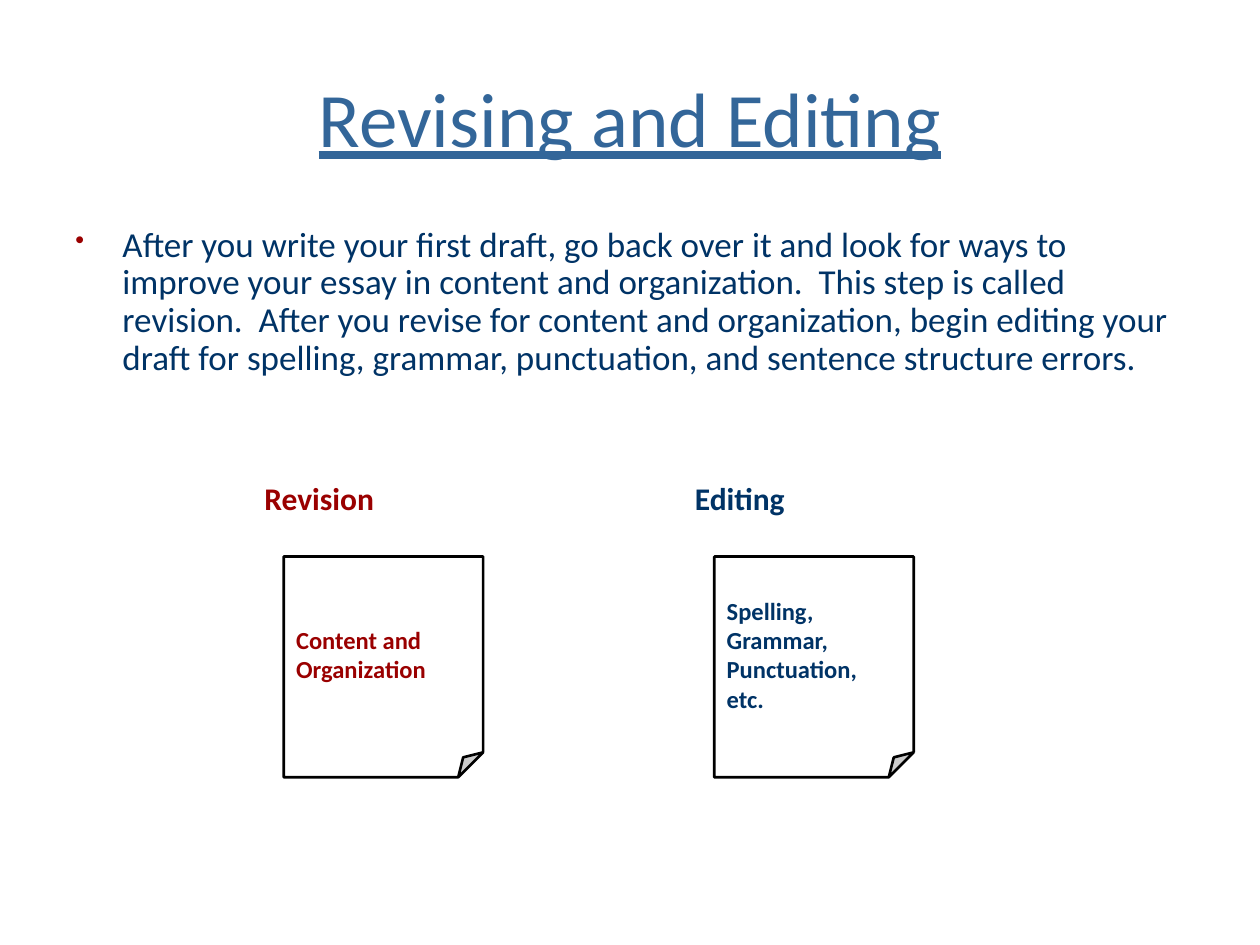
from dataclasses import dataclass

from lxml import etree
from pptx import Presentation
from pptx.dml.color import RGBColor
from pptx.enum.shapes import MSO_SHAPE
from pptx.enum.text import MSO_ANCHOR, PP_ALIGN
from pptx.oxml.ns import qn
from pptx.util import Cm, Pt

FOLDED_CORNER = MSO_SHAPE.FOLDED_CORNER
TOP, MIDDLE = MSO_ANCHOR.TOP, MSO_ANCHOR.MIDDLE
LEFT, CENTER = PP_ALIGN.LEFT, PP_ALIGN.CENTER


@dataclass(frozen=True)
class Theme:
    font: str = "Calibri"
    title_color: str = "336699"
    navy: str = "003366"
    red: str = "9A0000"
    paper: str = "FFFFFF"
    outline: str = "000000"
    title_size: int = 44
    body_size: int = 20
    label_size: int = 18
    note_size: int = 14


@dataclass(frozen=True)
class Stage:
    label: str
    lines: tuple[str, ...]
    color: str


THEME = Theme()
STAGES = (
    Stage("Revision", ("Content and", "Organization"), THEME.red),
    Stage("Editing", ("Spelling,", "Grammar,", "Punctuation,", "etc."), THEME.navy),
)
BODY = (
    "After you write your first draft, go back over it and look for ways to "
    "improve your essay in content and organization.  This step is called revision.  "
    "After you revise for content and organization, begin editing your draft for "
    "spelling, grammar, punctuation, and sentence structure errors."
)
FIRST_STAGE_LEFT, STAGE_STEP = 5.08, 8.68
NOTE_INDENT = 0.64


def write_text(shape, *lines: str, size: int, color: str, bold: bool = False,
               underline: bool = False, align=LEFT, anchor=TOP) -> None:
    """Fill a shape with one formatted paragraph for each line."""
    frame = shape.text_frame
    frame.word_wrap = True
    frame.vertical_anchor = anchor
    for index, line in enumerate(lines):
        paragraph = frame.paragraphs[0] if index == 0 else frame.add_paragraph()
        paragraph.alignment = align
        run = paragraph.add_run()
        run.text = line
        font = run.font
        font.name, font.size = THEME.font, Pt(size)
        font.bold, font.underline = bold, underline
        font.color.rgb = RGBColor.from_string(color)


def add_text(slide, left: float, top: float, width: float, height: float,
             *lines: str, **text_format):
    """Add a text box measured in centimetres."""
    shape = slide.shapes.add_textbox(Cm(left), Cm(top), Cm(width), Cm(height))
    write_text(shape, *lines, **text_format)
    return shape


def add_bullet(paragraph, color: str) -> None:
    """Give a paragraph a hanging, coloured bullet."""
    paragraph.line_spacing = 0.9
    properties = paragraph._p.get_or_add_pPr()
    properties.set("marL", str(Cm(0.95)))
    properties.set("indent", str(-Cm(0.95)))
    bullet_color = etree.SubElement(properties, qn("a:buClr"))
    etree.SubElement(bullet_color, qn("a:srgbClr"), val=color)
    etree.SubElement(properties, qn("a:buSzPct"), val="75000")
    etree.SubElement(properties, qn("a:buChar"), char="•")


def set_fold(shape, fraction: float) -> None:
    """Set the size of a folded corner as a fraction of the short side."""
    guides = shape._element.find(".//" + qn("a:avLst"))
    etree.SubElement(guides, qn("a:gd"), name="adj",
                     fmla=f"val {round(fraction * 100000)}")


def add_stage(slide, stage: Stage, left: float) -> None:
    """Add a stage label with its folded note below."""
    add_text(slide, left, 9.53, 5.28, 1.27, stage.label,
             size=THEME.label_size, color=stage.color, bold=True)
    note = slide.shapes.add_shape(
        FOLDED_CORNER, Cm(left + NOTE_INDENT), Cm(11.22), Cm(4.02), Cm(4.45))
    set_fold(note, 0.125)
    note.shadow.inherit = False
    note.fill.solid()
    note.fill.fore_color.rgb = RGBColor.from_string(THEME.paper)
    note.line.color.rgb = RGBColor.from_string(THEME.outline)
    note.line.width = Pt(1.5)
    write_text(note, *stage.lines, size=THEME.note_size, color=stage.color,
               bold=True, anchor=MIDDLE)


def main() -> None:
    """Build and save the slide."""
    presentation = Presentation()
    presentation.slide_width, presentation.slide_height = Cm(25.4), Cm(19.05)
    slide = presentation.slides.add_slide(presentation.slide_layouts[6])
    add_text(slide, 1.27, 0.76, 22.86, 3.18, "Revising and Editing",
             size=THEME.title_size, color=THEME.title_color, underline=True,
             align=CENTER, anchor=MIDDLE)
    body = add_text(slide, 1.27, 4.45, 22.86, 12.57, BODY,
                    size=THEME.body_size, color=THEME.navy)
    add_bullet(body.text_frame.paragraphs[0], THEME.red)
    for index, stage in enumerate(STAGES):
        add_stage(slide, stage, FIRST_STAGE_LEFT + index * STAGE_STEP)
    presentation.save("out.pptx")


if __name__ == "__main__":
    main()
